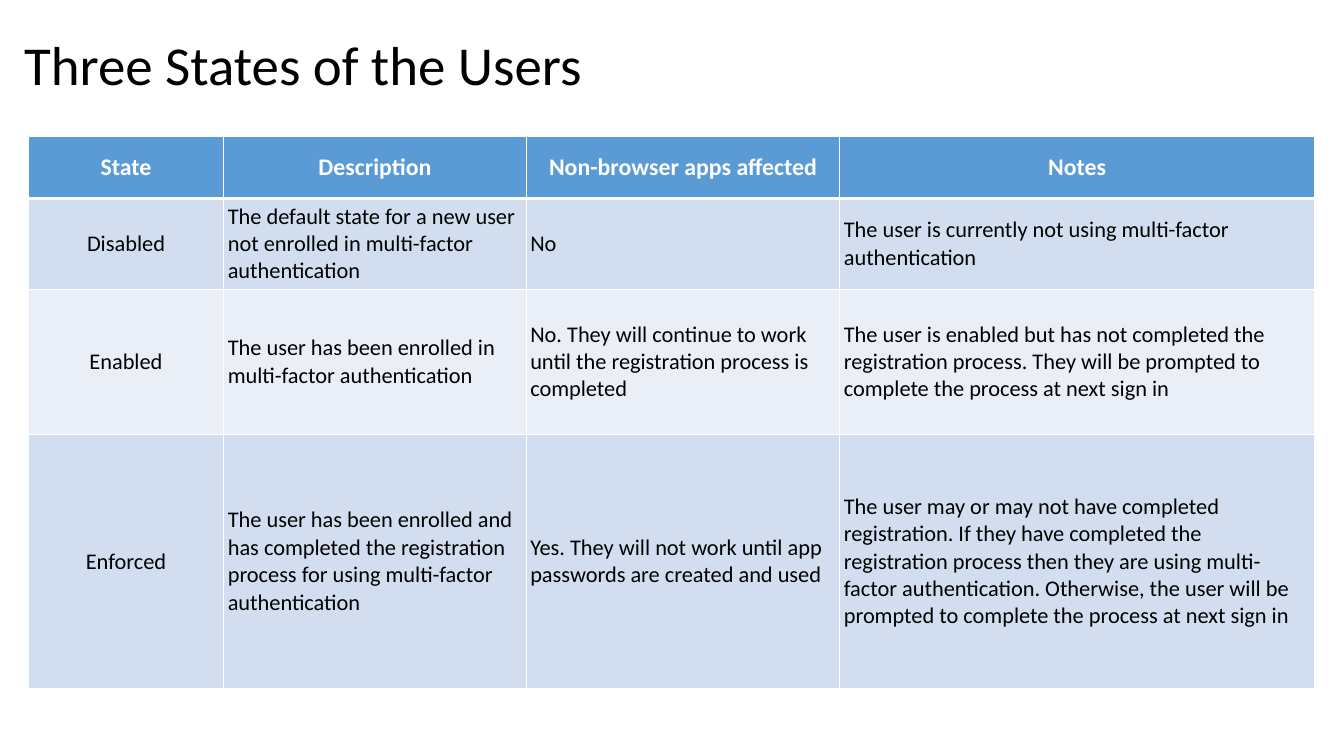
from dataclasses import dataclass

from lxml import etree
from pptx import Presentation
from pptx.dml.color import RGBColor
from pptx.enum import text as t
from pptx.oxml import ns
from pptx.util import Inches, Pt


@dataclass(frozen=True)
class Theme:
    font: str = "Calibri"
    ink: str = "000000"
    white: str = "FFFFFF"
    head: str = "5B9BD5"
    bands: tuple = ("D2DEEF", "EAEFF7")
    title: float = 39.2
    label: float = 17
    body: float = 16
    thin: float = 1
    thick: float = 3


THEME = Theme()

COLS = (1.94, 3, 3.11, 4.71)
ROWS = (0.62, 0.9, 1.44, 2.52)
STATES = (
    ("State", "Description", "Non-browser apps affected", "Notes"),
    ("Disabled",
     "The default state for a new user not enrolled in multi-factor authentication",
     "No",
     "The user is currently not using multi-factor authentication"),
    ("Enabled",
     "The user has been enrolled in multi-factor authentication",
     "No. They will continue to work until the registration process is completed",
     "The user is enabled but has not completed the registration process. "
     "They will be prompted to complete the process at next sign in"),
    ("Enforced",
     "The user has been enrolled and has completed the registration process "
     "for using multi-factor authentication",
     "Yes. They will not work until app passwords are created and used",
     "The user may or may not have completed registration. If they have completed "
     "the registration process then they are using multi-factor authentication. "
     "Otherwise, the user will be prompted to complete the process at next sign in"),
)


def style(para, size, color, bold=False):
    for run in para.runs:
        font = run.font
        font.name, font.size, font.bold = THEME.font, Pt(size), bold
        font.color.rgb = RGBColor.from_string(color)


def pad(area, side, end):
    area.margin_left = area.margin_right = Inches(side)
    area.margin_top = area.margin_bottom = Inches(end)


def border(cell, top, bottom):
    props = cell._tc.get_or_add_tcPr()
    widths = {"L": THEME.thin, "R": THEME.thin, "T": top, "B": bottom}
    for side, width in widths.items():
        line = etree.SubElement(props, ns.qn(f"a:ln{side}"), w=str(Pt(width)))
        fill = etree.SubElement(line, ns.qn("a:solidFill"))
        etree.SubElement(fill, ns.qn("a:srgbClr"), val=THEME.white)


def add_title(slide, words, left, top, width, height):
    title = slide.shapes.title
    title.left, title.top = Inches(left), Inches(top)
    title.width, title.height = Inches(width), Inches(height)
    frame = title.text_frame
    frame.text = words
    frame.word_wrap = True
    frame.auto_size = t.MSO_AUTO_SIZE.NONE
    frame.vertical_anchor = t.MSO_ANCHOR.MIDDLE
    pad(frame, 0.16, 0.1)
    para = frame.paragraphs[0]
    para.alignment = t.PP_ALIGN.LEFT
    para.line_spacing = 0.9
    style(para, THEME.title, THEME.ink)


def fill_cell(cell, words, row, col):
    head = row == 0
    # Borders, with a thick rule under the header
    border(cell, THEME.thick if row == 1 else THEME.thin,
           THEME.thick if head else THEME.thin)
    shade = THEME.head if head else THEME.bands[(row - 1) % 2]
    cell.fill.solid()
    cell.fill.fore_color.rgb = RGBColor.from_string(shade)
    # Text
    cell.text_frame.text = words
    cell.vertical_anchor = t.MSO_ANCHOR.MIDDLE
    pad(cell, 0.04, 0.02)
    para = cell.text_frame.paragraphs[0]
    center = head or col == 0
    para.alignment = t.PP_ALIGN.CENTER if center else t.PP_ALIGN.LEFT
    if head:
        style(para, THEME.label, THEME.white, True)
    else:
        style(para, THEME.body, THEME.ink)


def add_states(slide, left, top, width, height):
    table = slide.shapes.add_table(
        len(ROWS), len(COLS), Inches(left), Inches(top),
        Inches(width), Inches(height)).table
    for col, share in zip(table.columns, COLS):
        col.width = Inches(width * share / sum(COLS))
    for row, share in zip(table.rows, ROWS):
        row.height = Inches(height * share / sum(ROWS))
    for row, line in enumerate(STATES):
        for col, words in enumerate(line):
            fill_cell(table.cell(row, col), words, row, col)


def main():
    deck = Presentation()
    deck.slide_width, deck.slide_height = Inches(13.33), Inches(7.5)
    slide = deck.slides.add_slide(deck.slide_layouts[5])
    slide.background.fill.solid()
    slide.background.fill.fore_color.rgb = RGBColor.from_string(THEME.white)
    add_title(slide, "Three States of the Users", 0.08, 0.3, 12.75, 0.74)
    add_states(slide, 0.28, 1.35, 12.76, 5.48)
    deck.save("out.pptx")


if __name__ == "__main__":
    main()
